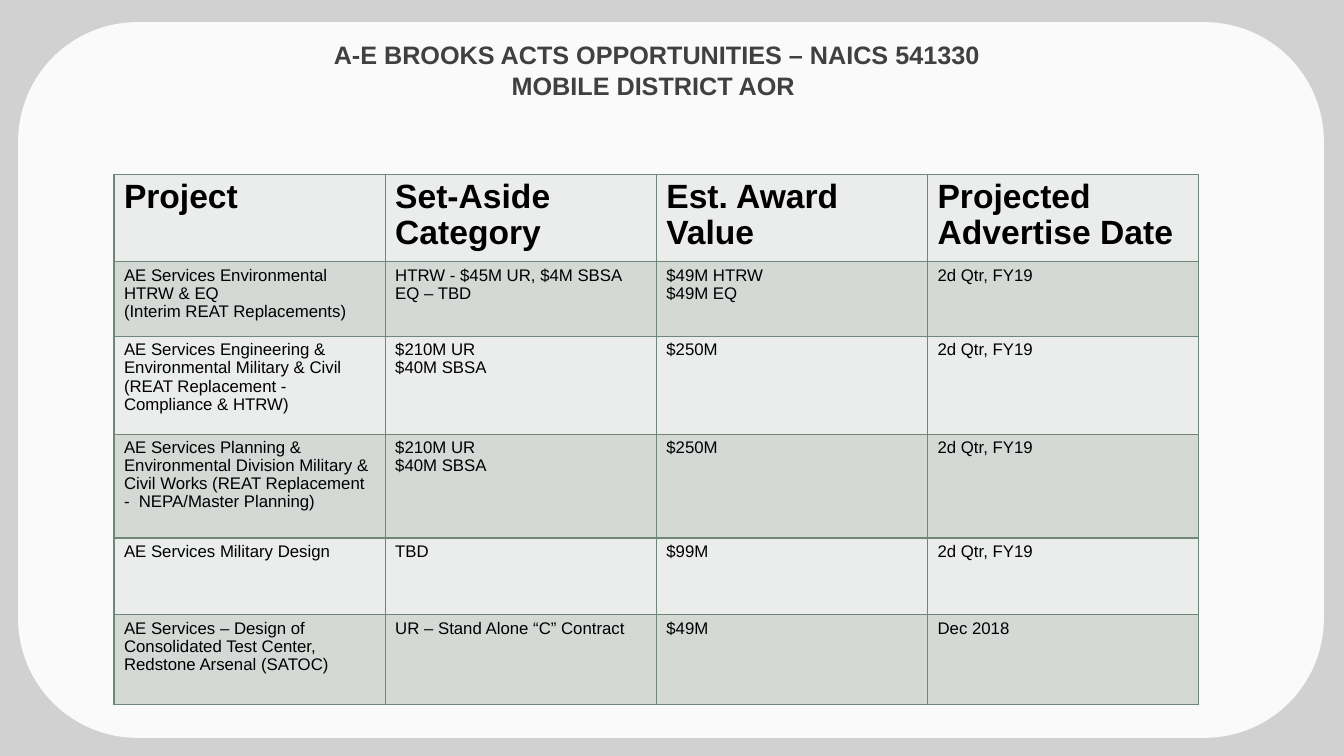
from lxml import etree
from pptx import Presentation
from pptx.dml.color import RGBColor
from pptx.enum.shapes import MSO_SHAPE
from pptx.enum.text import MSO_ANCHOR, PP_ALIGN
from pptx.oxml.ns import qn
from pptx.util import Inches, Pt

ROUNDED = MSO_SHAPE.ROUNDED_RECTANGLE
MIDDLE = MSO_ANCHOR.MIDDLE
CENTER = PP_ALIGN.CENTER

TITLE = ["A-E BROOKS ACTS OPPORTUNITIES – NAICS 541330", "MOBILE DISTRICT AOR "]
OPPORTUNITIES = [
    ("Project", "Set-Aside Category", "Est. Award Value", "Projected Advertise Date"),
    ("AE Services Environmental HTRW & EQ\n(Interim REAT Replacements)",
     "HTRW - $45M UR, $4M SBSA\nEQ – TBD", "$49M HTRW\n$49M EQ", "2d Qtr, FY19"),
    ("AE Services Engineering & Environmental Military & Civil\n"
     "(REAT Replacement - Compliance & HTRW)",
     "$210M UR\n$40M SBSA", "$250M", "2d Qtr, FY19"),
    ("AE Services Planning & Environmental Division Military & Civil Works "
     "(REAT Replacement -  NEPA/Master Planning)",
     "$210M UR\n$40M SBSA", "$250M", "2d Qtr, FY19"),
    ("AE Services Military Design", "TBD", "$99M", "2d Qtr, FY19"),
    ("AE Services – Design of Consolidated Test Center, Redstone Arsenal (SATOC)",
     "UR – Stand Alone “C” Contract", "$49M", "Dec 2018"),
]
ROW_HEIGHTS = [0.84, 0.74, 0.97, 1.03, 0.76, 0.89]
COLUMN_WIDTH = 2.69
BANDS = ["EBEDEC", "D5D9D6"]
BACKDROP, PANEL, GRID = "D1D1D1", "FAFAFA", "6E8778"
TITLE_INK, TABLE_INK = "404040", "000000"
FONT = "Arial"
LINE_SPACING = 0.96


def paint(fill, color):
    """Give a fill one solid colour."""
    fill.solid()
    fill.fore_color.rgb = RGBColor.from_string(color)


def add_run(paragraph, text, size, color, bold):
    """Add one formatted run to a paragraph."""
    run = paragraph.add_run()
    run.text = text
    run.font.name, run.font.size, run.font.bold = FONT, Pt(size), bold
    paint(run.font.fill, color)


def add_borders(cell):
    """Draw the grid line on all four sides of a cell."""
    properties = cell._tc.get_or_add_tcPr()
    for side in ("lnL", "lnR", "lnT", "lnB"):
        edge = etree.SubElement(properties, qn(f"a:{side}"), w=str(Pt(1)))
        solid = etree.SubElement(edge, qn("a:solidFill"))
        etree.SubElement(solid, qn("a:srgbClr"), val=GRID)


def add_panel(slide):
    """Draw the rounded panel behind the content."""
    panel = slide.shapes.add_shape(
        ROUNDED, Inches(0.18), Inches(0.22), Inches(12.95), Inches(7.1))
    panel.shadow.inherit = False
    paint(panel.fill, PANEL)
    panel.line.fill.background()


def add_title(slide):
    """Write the centred two-line title."""
    box = slide.shapes.add_textbox(Inches(1.5), Inches(0.31), Inches(10.03), Inches(0.77))
    frame = box.text_frame
    frame.word_wrap, frame.vertical_anchor = True, MIDDLE
    heading = frame.paragraphs[0]
    heading.alignment = CENTER
    for index, line in enumerate(TITLE):
        if index:
            heading.add_line_break()
        add_run(heading, line, 18, TITLE_INK, True)


def fill_cell(cell, text, row):
    """Write and style one table cell."""
    add_borders(cell)
    paint(cell.fill, BANDS[row % 2])
    frame = cell.text_frame
    for index, line in enumerate(text.split("\n")):
        paragraph = frame.add_paragraph() if index else frame.paragraphs[0]
        paragraph.line_spacing = LINE_SPACING
        add_run(paragraph, line, 12 if row else 24, TABLE_INK, row == 0)


def add_opportunities(slide):
    """Build the table of opportunities."""
    columns = len(OPPORTUNITIES[0])
    table = slide.shapes.add_table(
        len(OPPORTUNITIES), columns, Inches(1.13), Inches(1.73),
        Inches(columns * COLUMN_WIDTH), Inches(sum(ROW_HEIGHTS))).table
    table.first_row = table.horz_banding = False
    for column in table.columns:
        column.width = Inches(COLUMN_WIDTH)
    for row, (height, entries) in enumerate(zip(ROW_HEIGHTS, OPPORTUNITIES)):
        table.rows[row].height = Inches(height)
        for column, text in enumerate(entries):
            fill_cell(table.cell(row, column), text, row)


def main():
    """Build and save the slide."""
    deck = Presentation()
    deck.slide_width, deck.slide_height = Inches(13.33), Inches(7.5)
    slide = deck.slides.add_slide(deck.slide_layouts[6])
    paint(slide.background.fill, BACKDROP)
    add_panel(slide)
    add_title(slide)
    add_opportunities(slide)
    deck.save("out.pptx")


if __name__ == "__main__":
    main()
